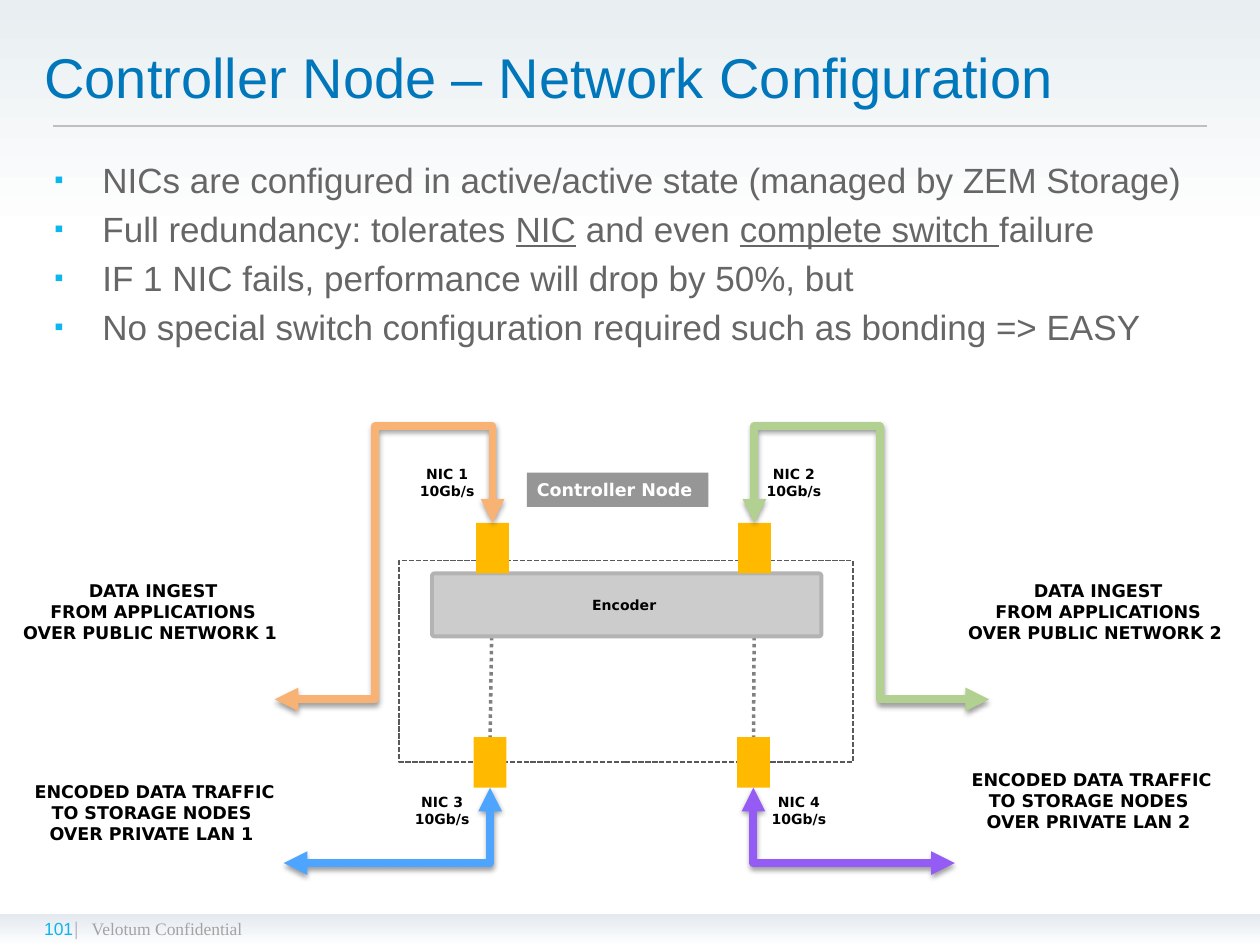
from lxml import etree
from pptx import Presentation
from pptx.dml.color import RGBColor
from pptx.enum.dml import MSO_LINE
from pptx.enum.shapes import MSO_CONNECTOR, MSO_SHAPE
from pptx.enum.text import MSO_ANCHOR, MSO_AUTO_SIZE, PP_ALIGN
from pptx.oxml.ns import qn
from pptx.util import Cm, Pt

RECT, ROUNDED = MSO_SHAPE.RECTANGLE, MSO_SHAPE.ROUNDED_RECTANGLE
STRAIGHT, ELBOW = MSO_CONNECTOR.STRAIGHT, MSO_CONNECTOR.ELBOW
DOTTED, DASHED = MSO_LINE.ROUND_DOT, MSO_LINE.SQUARE_DOT
LEFT, CENTER = PP_ALIGN.LEFT, PP_ALIGN.CENTER
TOP, MIDDLE = MSO_ANCHOR.TOP, MSO_ANCHOR.MIDDLE

BLACK, WHITE = RGBColor(0, 0, 0), RGBColor(255, 255, 255)
TITLE_BLUE, CYAN = RGBColor(0x00, 0x76, 0xBB), RGBColor(0x0D, 0xB6, 0xEC)
BODY_GRAY, FOOTER_GRAY = RGBColor(0x66, 0x66, 0x66), RGBColor(0xA3, 0xA3, 0xA3)
RULE_GRAY, LINK_GRAY = RGBColor(0xBF, 0xBF, 0xBF), RGBColor(0x80, 0x80, 0x80)
FRAME_GRAY, TAG_GRAY = RGBColor(0x59, 0x59, 0x59), RGBColor(0x96, 0x96, 0x96)
ENCODER_FILL, ENCODER_EDGE = RGBColor(0xCC, 0xCC, 0xCC), RGBColor(0xB3, 0xB3, 0xB3)
NIC_YELLOW = RGBColor(0xFF, 0xBA, 0x00)
ORANGE, GREEN = RGBColor(0xF8, 0xB2, 0x73), RGBColor(0xB2, 0xD0, 0x90)
BLUE, PURPLE = RGBColor(0x4D, 0xA5, 0xFF), RGBColor(0x94, 0x5C, 0xF4)
HEADER_FADE = [(0, RGBColor(0xE8, 0xEE, 0xF1)), (0.25, WHITE)]
FOOTER_FADE = [(0, RGBColor(0xE3, 0xE9, 0xEF)), (1, RGBColor(0xFD, 0xFE, 0xFF))]

# Content; all positions and sizes are in centimetres
TITLE = "Controller Node – Network Configuration"
# Each bullet is a list of (text, underlined)
BULLETS = [
    [("NICs are configured in active/active state (managed by ZEM Storage)", False)],
    [("Full redundancy: tolerates ", False), ("NIC", True), (" and even ", False),
     ("complete switch ", True), ("failure", False)],
    [("IF 1 NIC fails, performance will drop by 50%, but", False)],
    [("No special switch configuration required such as bonding => EASY", False)],
]
# text, box, font, size, colour
FOOTER = [
    ("Velotum Confidential", (1.6, 18.39, 12.7, 0.66), "Times New Roman", 10, FOOTER_GRAY),
    ("|", (1.27, 18.34, 0.48, 0.69), "Times New Roman", 11, FOOTER_GRAY),
    ("101", (0.64, 18.39, 1.3, 0.66), "Arial", 10, CYAN),
]
NIC_SIZE = (0.66, 1.02)
# number: (left, top) of the card, (left, top) of its label
NICS = {
    1: ((9.6, 10.54), (8.15, 9.27)),
    2: ((14.88, 10.54), (15.14, 9.27)),
    3: ((9.55, 14.86), (8.05, 15.88)),
    4: ((14.86, 14.86), (15.24, 15.88)),
}
LINKS = [(2, 4), (1, 3)]
INGEST = "DATA INGEST\nFROM APPLICATIONS\nOVER PUBLIC NETWORK {} "
ENCODED = "ENCODED DATA TRAFFIC\nTO STORAGE NODES \nOVER PRIVATE LAN {} "
TRAFFIC = [
    (INGEST.format(2), (19.25, 11.56, 5.77, 1.55)),
    (INGEST.format(1), (0.2, 11.56, 5.77, 1.55)),
    (ENCODED.format(1), (0.36, 15.62, 5.51, 1.55)),
    (ENCODED.format(2), (19.25, 15.37, 5.51, 1.55)),
]
# NIC, outer end, colour, preset, bend positions
FLOWS = [
    (1, (5.54, 14.1), ORANGE, "bentConnector4", (46200, 154600)),
    (2, (19.94, 14.1), GREEN, "bentConnector4", (46500, 154600)),
    (3, (5.72, 17.4), BLUE, "bentConnector2", ()),
    (4, (19.25, 17.4), PURPLE, "bentConnector2", ()),
]

prs = Presentation()
prs.slide_width, prs.slide_height = Cm(25.4), Cm(19.05)
slide = prs.slides.add_slide(prs.slide_layouts[1])
shapes = slide.shapes


def cm(values):
    return [Cm(v) for v in values]


def add_xml(parent, tag, **attributes):
    return etree.SubElement(parent, qn(tag), attributes)


def add_box(box, fill=None, edge=None, width=1, kind=RECT):
    shape = shapes.add_shape(kind, *cm(box))
    shape.shadow.inherit = False
    for part, color in ((shape.fill, fill), (shape.line.fill, edge)):
        if color is None:
            part.background()
        else:
            part.solid()
            part.fore_color.rgb = color
    if edge is not None:
        shape.line.width = Pt(width)
    return shape


def add_fade(box, stops):
    band = add_box(box)
    band.fill.gradient()
    band.fill.gradient_angle = 270
    for stop, (position, color) in zip(band.fill.gradient_stops, stops):
        stop.position, stop.color.rgb = position, color


def write(shape, text, align=CENTER, anchor=TOP, color=BLACK, **font):
    frame = shape.text_frame
    frame.text = text
    frame.word_wrap, frame.vertical_anchor = False, anchor
    style = {"name": "DejaVu Sans", "bold": True, **font}
    for paragraph in frame.paragraphs:
        paragraph.alignment = align
        for run in paragraph.runs:
            for key, value in style.items():
                setattr(run.font, key, value)
            run.font.color.rgb = color


def add_line(kind, begin, end, color, width):
    line = shapes.add_connector(kind, *cm((*begin, *end)))
    line.line.color.rgb, line.line.width = color, Pt(width)
    return line, add_xml(line._element.spPr, "a:effectLst")


# Background bands, footer and title rule
add_fade((0, 0, 25.4, 19.05), HEADER_FADE)
add_fade((0, 18.42, 25.4, 0.63), FOOTER_FADE)
for text, box, name, size, color in FOOTER:
    write(shapes.add_textbox(*cm(box)), text, LEFT, color=color,
          name=name, size=Pt(size), bold=False)
add_line(STRAIGHT, (1.07, 2.54), (24.33, 2.54), RULE_GRAY, 0.75)

# Links between the cards, behind the diagram
links = []
for upper, lower in LINKS:
    link, _ = add_line(STRAIGHT, NICS[upper][0], NICS[lower][0], LINK_GRAY, 2)
    link.line.dash_style = DOTTED
    links.append((link, upper, lower))

# Title and bullets, brought in front of the bands
title, body = shapes.title, slide.placeholders[1]
for holder, box in ((title, (0.64, 0.64, 21.59, 1.78)), (body, (0.84, 2.92, 23.93, 6.86))):
    holder.left, holder.top, holder.width, holder.height = cm(box)
    holder.text_frame.auto_size = MSO_AUTO_SIZE.NONE
    shapes._spTree.append(holder._element)
write(title, TITLE, LEFT, MIDDLE, TITLE_BLUE, name="Arial", size=Pt(32), bold=False)
title.text_frame.word_wrap = True

body.text_frame.margin_top = Cm(0.27)
for number, parts in enumerate(BULLETS):
    paragraph = body.text_frame.paragraphs[0] if number == 0 else body.text_frame.add_paragraph()
    props = paragraph._p.get_or_add_pPr()
    props.set("marL", str(Cm(0.97)))
    props.set("indent", str(-Cm(0.97)))
    spacing = add_xml(props, "a:spcBef")
    add_xml(spacing, "a:spcPct", val="20000" if number else "0")
    add_xml(add_xml(props, "a:buClr"), "a:srgbClr", val=str(CYAN))
    add_xml(props, "a:buSzPct", val="75000")
    add_xml(props, "a:buFont", typeface="Arial")
    add_xml(props, "a:buChar", char="▪")
    for text, underlined in parts:
        run = paragraph.add_run()
        run.text = text
        for key, value in {"name": "Arial", "size": Pt(20), "underline": underlined}.items():
            setattr(run.font, key, value)
        run.font.color.rgb = BODY_GRAY

# Controller node with its encoder
add_box((8.05, 11.3, 9.14, 4.06), edge=FRAME_GRAY).line.dash_style = DASHED
node_tag = add_box((10.62, 9.53, 3.66, 0.69), TAG_GRAY)
write(node_tag, "Controller Node ", color=WHITE, size=Pt(10))
encoder = add_box((8.71, 11.56, 7.85, 1.27), ENCODER_FILL, ENCODER_EDGE, 2.25, ROUNDED)
encoder.adjustments[0] = 0.04
write(encoder, "Encoder ", anchor=MIDDLE, size=Pt(8))

# Network cards and their labels
cards = {}
for number, (place, label_place) in NICS.items():
    cards[number] = add_box((*place, *NIC_SIZE), NIC_YELLOW)
    label = shapes.add_textbox(*cm((*label_place, 1.73, 0.94)))
    write(label, f"NIC {number}\n10Gb/s", size=Pt(8))
for link, upper, lower in links:
    link.begin_connect(cards[upper], 2)
    link.end_connect(cards[lower], 0)

# Traffic arrows: upper cards are entered from above, lower ones from below
for number, outer, color, preset, bends in FLOWS:
    left, top = NICS[number][0]
    inner = (left + NIC_SIZE[0] / 2, top if number <= 2 else top + NIC_SIZE[1])
    flow, effects = add_line(ELBOW, outer, inner, color, 4.5)
    geometry = flow._element.spPr.find(qn("a:prstGeom"))
    geometry.set("prst", preset)
    guides = geometry.find(qn("a:avLst"))
    for index, bend in enumerate(bends, 1):
        add_xml(guides, "a:gd", name=f"adj{index}", fmla=f"val {bend}")
    for end in ("a:headEnd", "a:tailEnd"):
        add_xml(flow.line._get_or_add_ln(), end, type="triangle")
    shadow = add_xml(effects, "a:outerShdw", blurRad=str(Pt(3.1)), dist=str(Pt(1.6)),
                     dir="5400000", rotWithShape="0")
    add_xml(add_xml(shadow, "a:srgbClr", val=str(BLACK)), "a:alpha", val="38000")

# Traffic descriptions
for text, box in TRAFFIC:
    write(shapes.add_textbox(*cm(box)), text, size=Pt(10))

prs.save("out.pptx")
